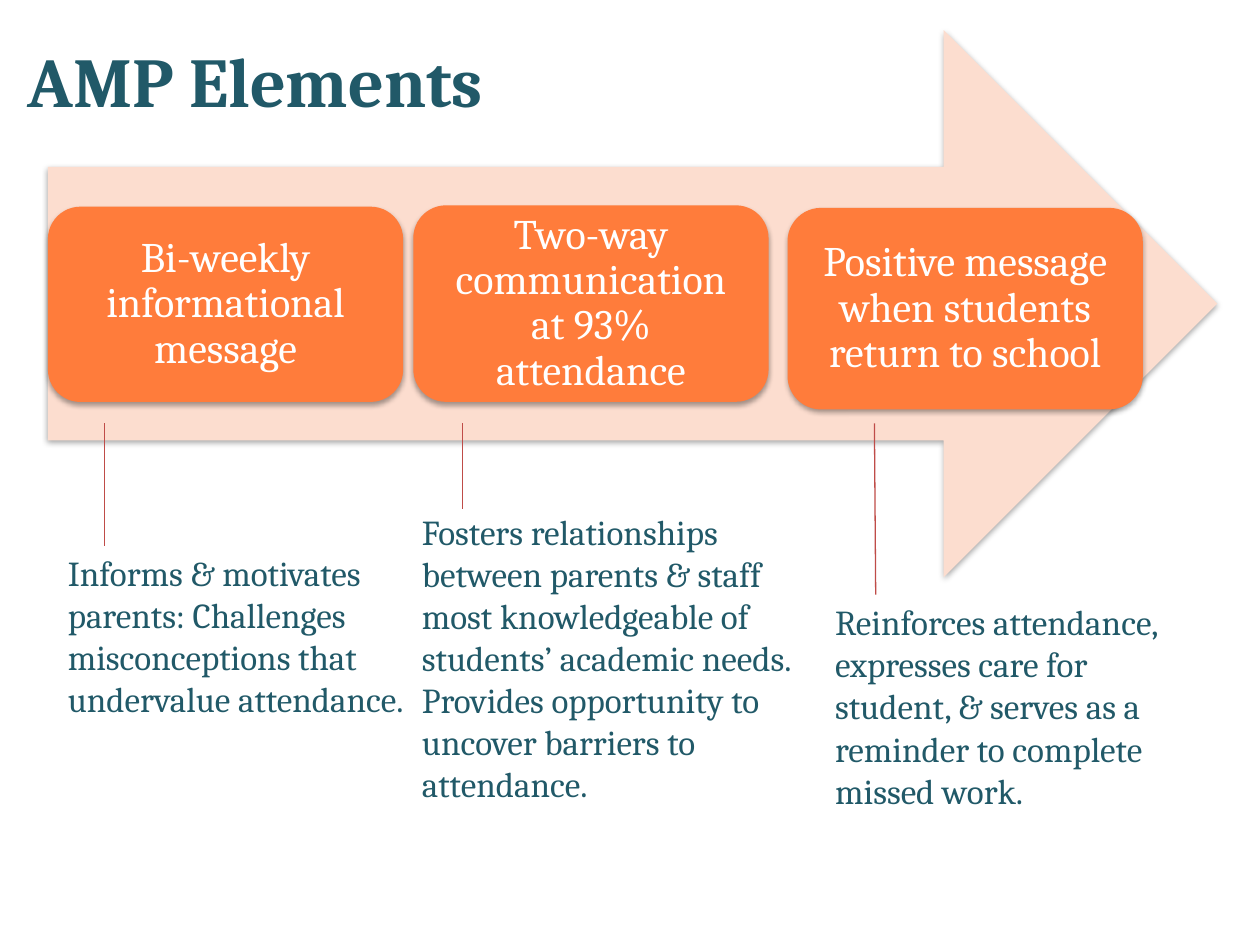
from lxml import etree
from pptx import Presentation
from pptx.dml.color import RGBColor
from pptx.enum.shapes import MSO_CONNECTOR, MSO_SHAPE
from pptx.enum.text import MSO_ANCHOR, MSO_AUTO_SIZE, PP_ALIGN
from pptx.oxml import parse_xml
from pptx.oxml.ns import nsdecls, qn
from pptx.util import Inches, Pt

FONT = "Cambria"
TEAL, ORANGE, PEACH, RED, WHITE = "215968", "FF7C3B", "FCDDCF", "BF4C48", "FFFFFF"
ARROW_BOX = (0.38, 0.24, 9.28, 4.34)
STEP_W, LINE_TOP = 2.82, 3.36

# Each step: heading, its (left, top, height); note, its (left, top, width, height);
# the horizontal start and end of the line that leads to the note, and its bottom
STEPS = [
    ("Bi-weekly informational message", (0.38, 1.64, 1.55),
     "Informs & motivates parents: Challenges misconceptions that undervalue attendance.",
     (0.44, 4.33, 2.87, 1.78), (0.83, 0.83, 4.33)),
    ("Two-way communication at 93% attendance", (3.28, 1.63, 1.56),
     "Fosters relationships between parents & staff most knowledgeable of students’ "
     "academic needs. Provides opportunity to uncover barriers to attendance.",
     (3.25, 4, 3.25, 2.46), (3.67, 3.67, 4.04)),
    ("Positive message when students return to school", (6.25, 1.65, 1.6),
     "Reinforces attendance, expresses care for student, & serves as a reminder "
     "to complete missed work.",
     (6.53, 4.72, 3.1, 1.78), (6.94, 6.95, 4.72)),
]


def rgb(value):
    return RGBColor.from_string(value)


def write(tf, text, size=20, color=TEAL, bold=False, align=PP_ALIGN.LEFT, spacing=None):
    tf.word_wrap = True
    p = tf.paragraphs[0]
    p.alignment = align
    p.line_spacing = spacing
    r = p.add_run()
    r.text = text
    r.font.name, r.font.size, r.font.bold = FONT, Pt(size), bold
    r.font.color.rgb = rgb(color)


def add_text(slide, box, text, **fmt):
    tf = slide.shapes.add_textbox(*map(Inches, box)).text_frame
    tf.auto_size = MSO_AUTO_SIZE.SHAPE_TO_FIT_TEXT
    write(tf, text, **fmt)
    return tf


def add_raised_shape(slide, kind, box, fill):
    """Add a borderless shape with a soft shadow below it."""
    sp = slide.shapes.add_shape(kind, *map(Inches, box))
    sp.fill.solid()
    sp.fill.fore_color.rgb = rgb(fill)
    sp.line.fill.background()
    sp._element.spPr.append(parse_xml(
        f'<a:effectLst {nsdecls("a")}><a:outerShdw blurRad="{Pt(3.1)}" dist="{Pt(1.8)}" '
        'dir="5400000" rotWithShape="0"><a:srgbClr val="000000"><a:alpha val="35000"/>'
        '</a:srgbClr></a:outerShdw></a:effectLst>'))
    return sp


def add_line(slide, x1, y1, x2, y2):
    ends = map(Inches, (x1, y1, x2, y2))
    line = slide.shapes.add_connector(MSO_CONNECTOR.STRAIGHT, *ends)
    line.line.color.rgb = rgb(RED)
    line.line.width = Pt(0.75)
    etree.SubElement(line._element.spPr, qn("a:effectLst"))


def add_step(slide, heading, place, note, note_box, lead):
    left, top, height = place
    sp = add_raised_shape(slide, MSO_SHAPE.ROUNDED_RECTANGLE,
                          (left, top, STEP_W, height), ORANGE)
    tf = sp.text_frame
    tf.margin_left = tf.margin_right = tf.margin_top = tf.margin_bottom = Inches(0.1)
    tf.vertical_anchor = MSO_ANCHOR.MIDDLE
    write(tf, heading, size=24, color=WHITE, align=PP_ALIGN.CENTER, spacing=0.9)
    add_text(slide, note_box, note)
    x1, x2, bottom = lead
    add_line(slide, x1, LINE_TOP, x2, bottom)


def main():
    prs = Presentation()
    prs.slide_width, prs.slide_height = Inches(10), Inches(7.5)
    slide = prs.slides.add_slide(prs.slide_layouts[6])
    title = add_text(slide, (0, 0.25, 10, 0.77), "AMP Elements", size=40, bold=True)
    title.margin_left = Inches(0.22)
    add_raised_shape(slide, MSO_SHAPE.RIGHT_ARROW, ARROW_BOX, PEACH)
    for step in STEPS:
        add_step(slide, *step)
    prs.save("out.pptx")


if __name__ == "__main__":
    main()
